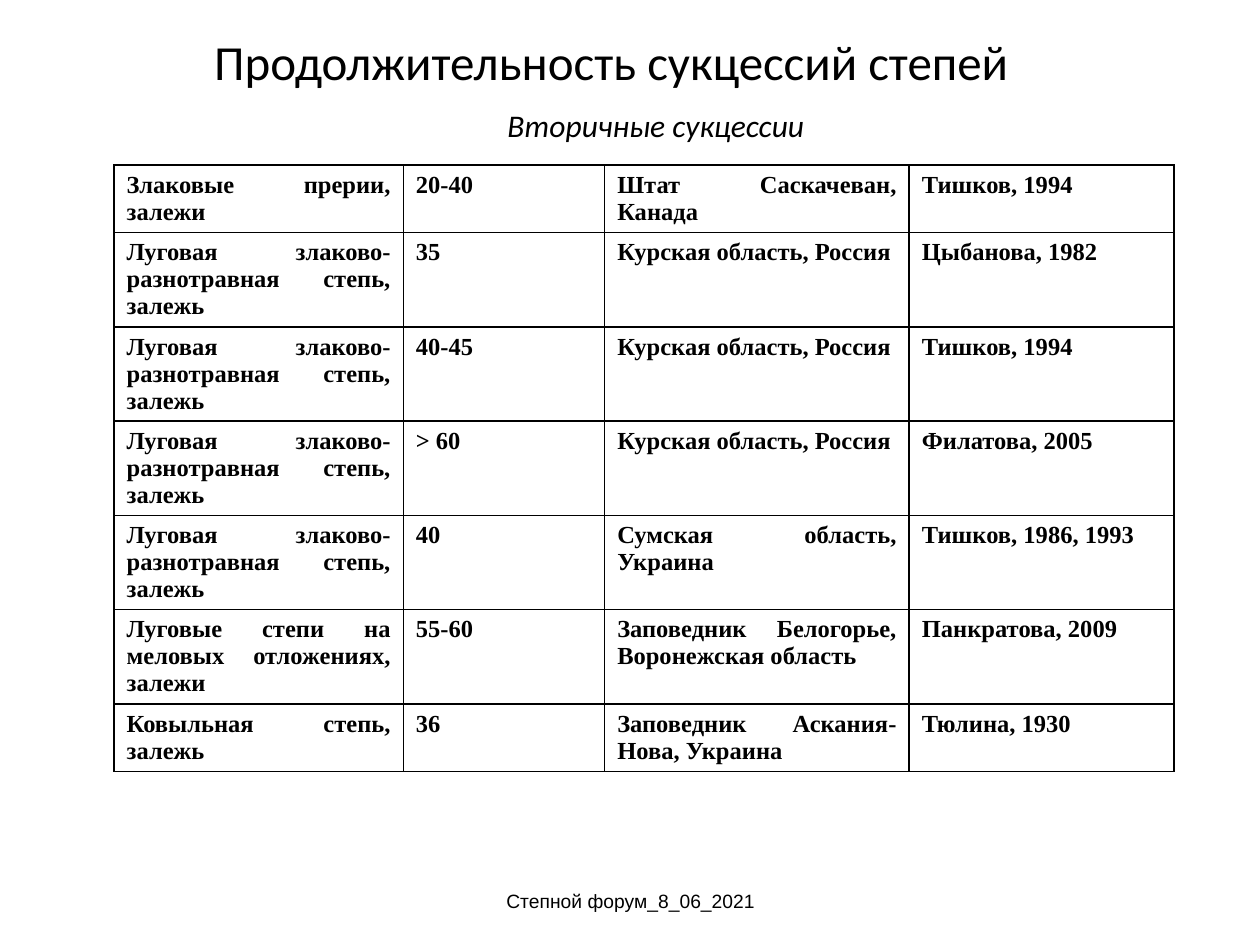
import pptx
import pptx.dml.color
import pptx.enum.text
import pptx.oxml
import pptx.oxml.ns
import pptx.util
from pptx.util import Cm

ALIGN = pptx.enum.text.PP_ALIGN
ANCHOR = pptx.enum.text.MSO_ANCHOR
BLACK = "000000"


def format_text(frame, font_name, size, align, bold=False, italic=False, color=BLACK):
    for para in frame.paragraphs:
        para.alignment = align
        for span in para.runs:
            span.font.name = font_name
            span.font.size = pptx.util.Pt(size)
            span.font.bold = bold
            span.font.italic = italic
            span.font.color.rgb = pptx.dml.color.RGBColor.from_string(color)


def add_borders(cell, color=BLACK):
    """Draw a 1 pt line on all four sides of a cell."""
    properties = cell._tc.get_or_add_tcPr()
    for position, side in enumerate(("lnL", "lnR", "lnT", "lnB")):
        line = pptx.oxml.parse_xml(
            f'<a:{side} {pptx.oxml.ns.nsdecls("a")} w="12700">'
            f'<a:solidFill><a:srgbClr val="{color}"/></a:solidFill></a:{side}>'
        )
        properties.insert(position, line)


deck = pptx.Presentation()
deck.slide_width = Cm(25.4)
deck.slide_height = Cm(19.05)
page = deck.slides.add_slide(deck.slide_layouts[5])

title = page.shapes.title
title.left, title.top, title.width, title.height = Cm(0.89), Cm(0.13), Cm(22.86), Cm(2.21)
title.text_frame.text = "Продолжительность сукцессий степей"
title.text_frame.vertical_anchor = ANCHOR.MIDDLE
format_text(title.text_frame, "Calibri", 28, ALIGN.CENTER)

meadow_steppe = "Луговая злаково-разнотравная степь, залежь"
kursk = "Курская область, Россия"
successions = [
    ("Злаковые прерии, залежи", "20-40", "Штат Саскачеван, Канада", "Тишков, 1994"),
    (meadow_steppe, "35", kursk, "Цыбанова, 1982"),
    (meadow_steppe, "40-45", kursk, "Тишков, 1994"),
    (meadow_steppe, "> 60", kursk, "Филатова, 2005"),
    (meadow_steppe, "40", "Сумская область, Украина", "Тишков, 1986, 1993"),
    ("Луговые степи на меловых отложениях, залежи", "55-60",
     "Заповедник Белогорье, Воронежская область", "Панкратова, 2009"),
    ("Ковыльная степь, залежь", "36", "Заповедник Аскания-Нова, Украина", "Тюлина, 1930"),
]
column_widths = [5.83, 4.06, 6.14, 5.34]
row_heights = [1.36] + [1.9] * 5 + [1.36]

table = page.shapes.add_table(
    len(successions), len(column_widths), Cm(2.3), Cm(3.33),
    Cm(sum(column_widths)), Cm(sum(row_heights)),
).table
table.first_row = False
table.horz_banding = False
for column, width in zip(table.columns, column_widths):
    column.width = Cm(width)
for row, height, entries in zip(table.rows, row_heights, successions):
    row.height = Cm(height)
    for cell, entry in zip(row.cells, entries):
        cell.text_frame.text = entry
        cell.fill.background()
        add_borders(cell)
        format_text(cell.text_frame, "Times New Roman", 14, ALIGN.JUSTIFY, bold=True)

subtitle = page.shapes.add_textbox(Cm(9.98), Cm(2.01), Cm(7.24), Cm(1.02))
subtitle.text_frame.text = "Вторичные сукцессии"
subtitle.text_frame.word_wrap = False
subtitle.text_frame.auto_size = pptx.enum.text.MSO_AUTO_SIZE.SHAPE_TO_FIT_TEXT
format_text(subtitle.text_frame, "Calibri", 18, ALIGN.LEFT, italic=True)

footer = page.shapes.add_textbox(Cm(8.69), Cm(17.65), Cm(8.05), Cm(1.02))
footer.text_frame.text = "Степной форум_8_06_2021"
footer.text_frame.word_wrap = True
footer.text_frame.vertical_anchor = ANCHOR.MIDDLE
format_text(footer.text_frame, "Arial", 11, ALIGN.CENTER)

deck.save("out.pptx")
